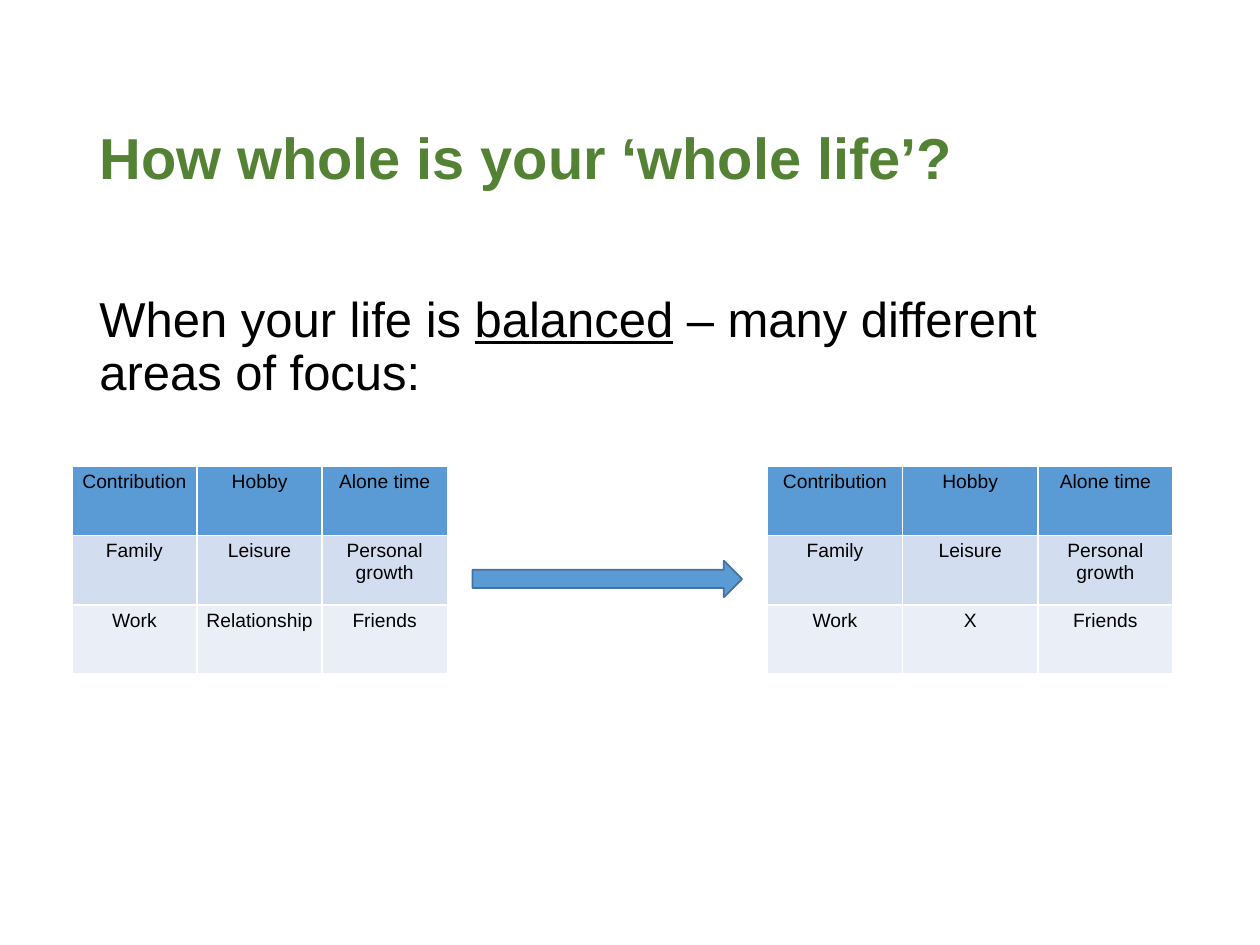
"""Build the slide comparing two whole-life grids."""
from pptx import Presentation, util as u
from pptx.dml.color import RGBColor
from pptx.enum import shapes, text

HUES = {"title": "548235", "ink": "000000", "blue": "5B9BD5", "edge": "43739E",
        "band": "D2DEEF", "pale": "EAEFF7"}
FILLS = ["blue", "band", "pale"]


def hue(name):
    return RGBColor.from_string(HUES[name])


def style(run, size, name="ink", bold=False):
    run.font.name = "Arial"
    run.font.size = u.Pt(size)
    run.font.bold = bold
    run.font.color.rgb = hue(name)


deck = Presentation()
deck.slide_width, deck.slide_height = u.Inches(10), u.Inches(7.5)
slide = deck.slides.add_slide(deck.slide_layouts[5])

title = slide.shapes.title
title.left, title.top = u.Inches(0.69), u.Inches(0.75)
title.width, title.height = u.Inches(9.01), u.Inches(1.06)
frame = title.text_frame
frame.text = "How whole is your ‘whole life’?"
frame.vertical_anchor = text.MSO_ANCHOR.MIDDLE
para = frame.paragraphs[0]
para.alignment = text.PP_ALIGN.LEFT
para.line_spacing = 0.9
style(para.runs[0], 33, "title", True)

body = slide.shapes.add_textbox(u.Inches(0.69), u.Inches(2.29), u.Inches(8.62), u.Inches(3.44))
body.text_frame.word_wrap = True
para = body.text_frame.paragraphs[0]
para.line_spacing = 0.9
for words in ["When your life is ", "balanced", " – many different areas of focus:"]:
    run = para.add_run()
    run.text = words
    style(run, 28)
    run.font.underline = words == "balanced"

arrow = slide.shapes.add_shape(shapes.MSO_SHAPE.RIGHT_ARROW, u.Inches(3.75), u.Inches(4.45),
                               u.Inches(2.14), u.Inches(0.29))
arrow.shadow.inherit = False
arrow.fill.solid()
arrow.fill.fore_color.rgb = hue("blue")
arrow.line.color.rgb = hue("edge")
arrow.line.width = u.Pt(1)

for left, width, focus in [(0.57, 2.98, "Relationship"), (6.09, 3.22, "X")]:
    rows = [["Contribution", "Hobby", "Alone time"],
            ["Family", "Leisure", "Personal growth"],
            ["Work", focus, "Friends"]]
    grid = slide.shapes.add_table(3, 3, u.Inches(left), u.Inches(3.7),
                                  u.Inches(width), u.Inches(1.65)).table
    for r, row in enumerate(rows):
        for c, label in enumerate(row):
            cell = grid.cell(r, c)
            cell.fill.solid()
            cell.fill.fore_color.rgb = hue(FILLS[r])
            cell.margin_left = cell.margin_right = u.Inches(0.07)
            cell.margin_top = cell.margin_bottom = u.Inches(0.04)
            cell.text_frame.text = label
            para = cell.text_frame.paragraphs[0]
            para.alignment = text.PP_ALIGN.CENTER
            style(para.runs[0], 11)

deck.save("out.pptx")
